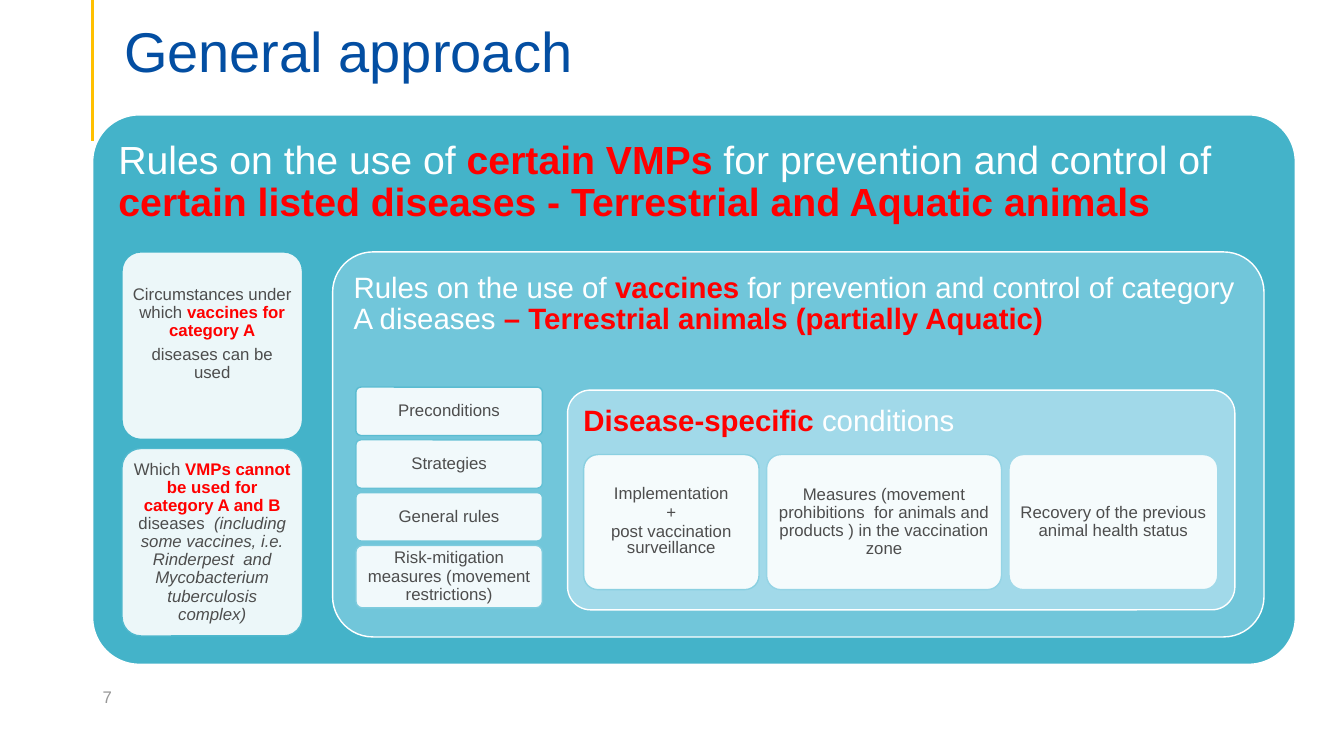
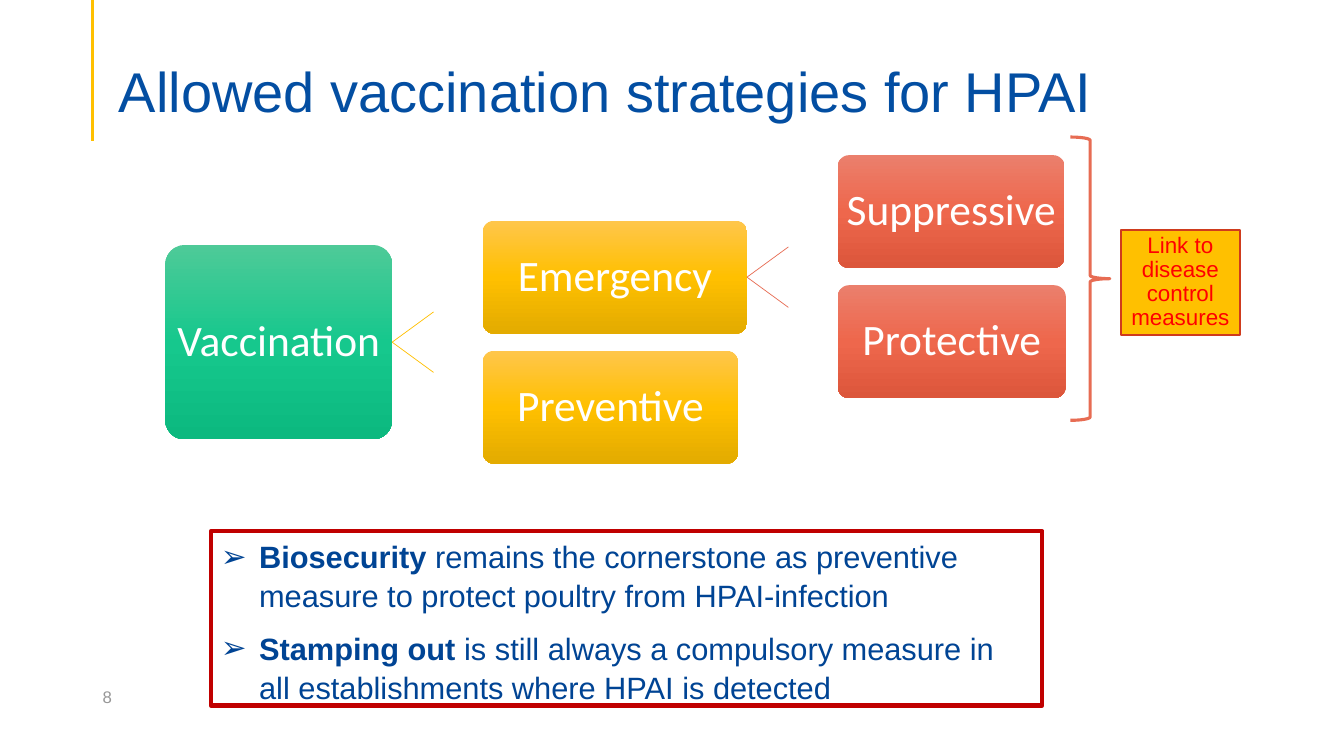
from copy import deepcopy
from itertools import accumulate

from lxml import etree
from pptx import Presentation
from pptx import util as u
from pptx.dml.color import RGBColor
from pptx.enum import shapes, text
from pptx.oxml.ns import qn

# Shared look
WIDTH, HEIGHT = u.Inches(13.33), u.Inches(7.5)
COLORS = {
    "title": "034EA2", "body": "004494", "bar": "FFC000", "number": "979797",
    "white": "FFFFFF", "red": "FF0000", "card_text": "4D4D4D",
    "outer": "44B3C9", "middle": "71C6DA", "inner": "A1D9E9",
    "coral": "E76C53", "note_edge": "CF3B1D", "frame": "C00000",
}
GRADIENTS = {
    "green": ("4ECA98", "16C88D", "0CB97F"),
    "amber": ("FFC64B", "FFC000", "E3AB00"),
    "coral": ("EB7F6C", "EE674C", "DC563B"),
}
RUN_STYLES = {
    "plain": {},
    "key": {"bold": True, "color": "red"},
    "strong": {"bold": True},
    "aside": {"italic": True},
}
LEFT, CENTER = text.PP_ALIGN.LEFT, text.PP_ALIGN.CENTER
TOP, MIDDLE, BOTTOM = (text.MSO_ANCHOR.TOP, text.MSO_ANCHOR.MIDDLE,
                       text.MSO_ANCHOR.BOTTOM)
CARD_COUNT = 9


# Geometry: all places are percentages of the slide's width and height
def place(left, top, width, height):
    return [round(share * side / 100) for share, side in
            zip((left, top, width, height), (WIDTH, HEIGHT) * 2)]


def starts(first, sizes, gap):
    return list(accumulate((size + gap for size in sizes[:-1]), initial=first))


# Colour
def rgb(name):
    return RGBColor.from_string(COLORS.get(name, name))


def blend(start, end, share):
    return "".join(f"{round(a + (b - a) * share):02X}"
                   for a, b in zip(rgb(start), rgb(end)))


def set_fill(shape, color, opacity=None):
    if color is None:
        shape.fill.background()
    elif color in GRADIENTS and opacity == "gradient":
        shape.fill.gradient()
        shape.fill.gradient_angle = 270
        stops = shape._element.spPr.find(".//" + qn("a:gsLst"))
        stops.append(deepcopy(stops[0]))
        for index, stop in enumerate(shape.fill.gradient_stops):
            stop.position = index / 2
            stop.color.rgb = rgb(GRADIENTS[color][index])
    else:
        shape.fill.solid()
        shape.fill.fore_color.rgb = rgb(color)
        if opacity:
            value = shape._element.spPr.find(".//" + qn("a:srgbClr"))
            etree.SubElement(value, qn("a:alpha"), val=str(opacity * 1000))


def set_line(shape, color, points):
    if color is None:
        shape.line.fill.background()
    else:
        shape.line.color.rgb = rgb(color)
        shape.line.width = u.Pt(points)


# Text
def set_all(target, values):
    for name, value in values.items():
        setattr(target, name, value)


def set_bullet(para, mark, indent):
    props = para._p.get_or_add_pPr()
    props.set("marL", str(indent))
    props.set("indent", str(-indent))
    etree.SubElement(props, qn("a:buFont"), typeface="Arial")
    etree.SubElement(props, qn("a:buChar"), char=mark)


def write(shape, paragraphs, size, color, font="Arial", anchor=MIDDLE,
          align=CENTER, spacing=0.9, gap=0, insets=(0.05,) * 4, bullet=None):
    frame = shape.text_frame
    sides = ("margin_left", "margin_top", "margin_right", "margin_bottom")
    set_all(frame, {"word_wrap": True, "auto_size": text.MSO_AUTO_SIZE.NONE,
                    "vertical_anchor": anchor,
                    **dict(zip(sides, map(u.Inches, insets)))})
    for index, spans in enumerate(paragraphs):
        para = frame.add_paragraph() if index else frame.paragraphs[0]
        if bullet:
            set_bullet(para, bullet, u.Inches(0.38))
        set_all(para, {"alignment": align, "line_spacing": spacing,
                       "space_before": u.Pt(gap if index else 0),
                       "space_after": u.Pt(0)})
        for style, words in spans:
            span = para.add_run()
            span.text = words
            values = {"name": font, "size": u.Pt(size), "bold": False,
                      **RUN_STYLES[style]}
            span.font.color.rgb = rgb(values.pop("color", color))
            set_all(span.font, values)


def plain(*lines):
    return [[("plain", line)] for line in lines]


# Elements
def add_box(page, area, fill, line=None, points=1, radius=0.105, opacity=None):
    kinds = shapes.MSO_SHAPE
    kind = kinds.ROUNDED_RECTANGLE if radius else kinds.RECTANGLE
    box = page.shapes.add_shape(kind, *place(*area))
    box.shadow.inherit = False
    if radius:
        box.adjustments[0] = radius
    set_fill(box, fill, opacity)
    set_line(box, line, points)
    return box


def add_panel(page, area, fill, spans, size, inset, radius=0.105):
    panel = add_box(page, area, fill, "white", radius=radius)
    write(panel, [spans], size, "white", anchor=TOP, align=LEFT,
          insets=(inset,) * 4)


def add_card(page, area, order, paragraphs, **layout):
    edge = blend("outer", "inner", order / (CARD_COUNT - 1))
    card = add_box(page, area, "white", edge, opacity=90)
    write(card, paragraphs, 12, "card_text", **layout)


def add_node(page, area, gradient, label):
    node = add_box(page, area, gradient, radius=0.1, opacity="gradient")
    write(node, plain(label), 31, "white", font="Calibri", insets=(0.02,) * 4)


def add_line(page, start, end, color, points):
    ends = place(*start, *end)
    line = page.shapes.add_connector(shapes.MSO_CONNECTOR.STRAIGHT, *ends)
    set_line(line, color, points)
    etree.SubElement(line._element.spPr, qn("a:effectLst"))


def add_fork(page, area, color):
    left, top, width, height = area
    x, y = left + width, top + height / 2
    for rise in (-4, 4):
        add_line(page, (x, y), (x + 3.08, y + rise), color, 0.5)


def add_page(deck, layout, title, title_area, number):
    page = deck.slides.add_slide(deck.slide_layouts[layout])
    add_line(page, (6.9, 0), (6.9, 18.67), "bar", 2.25)
    heading = page.shapes.title
    heading.left, heading.top, heading.width, heading.height = place(*title_area)
    write(heading, plain(title), 40, "title", anchor=BOTTOM, align=LEFT,
          insets=(0.1, 0.05, 0.1, 0))
    box = page.shapes.add_textbox(*place(6.9, 89.47, 22.5, 5.33))
    write(box, plain(str(number)), 12, "number", align=LEFT, spacing=1,
          insets=(0.1, 0.05, 0.1, 0.05))
    return page


# Slides
def build_approach(deck):
    page = add_page(deck, 5, "General approach", (8.48, 2.13, 86.25, 9.07), 7)

    # Nested panels
    add_panel(page, (6.9, 15.2, 89.48, 72.67), "outer", [
        ("plain", "Rules on the use of "),
        ("key", "certain VMPs"),
        ("plain", " for prevention and control of "),
        ("key", "certain listed diseases - Terrestrial and Aquatic animals"),
    ], 28, 0.12, radius=0.085)
    add_panel(page, (24.75, 33.33, 69.3, 50.93), "middle", [
        ("plain", "Rules on the use of "),
        ("key", "vaccines"),
        ("plain", " for prevention and control of category A diseases "),
        ("key", "– Terrestrial animals (partially Aquatic)"),
    ], 21, 0.09)
    add_panel(page, (42.23, 51.6, 49.65, 29.07), "inner", [
        ("key", "Disease-specific "), ("plain", "conditions"),
    ], 21, 0.09)

    # Cards beside the middle panel
    uses = [
        ([[("plain", "Circumstances under which "),
           ("key", "vaccines for category A")],
          [("plain", "diseases can be used")]],
         {"gap": 4, "insets": (0.05, 0.05, 0.05, 0.28)}),
        ([[("plain", "Which "),
           ("key", "VMPs cannot be used for category A and B "),
           ("plain", "diseases  "),
           ("aside", "(including some vaccines, i.e. Rinderpest  and "
                     "Mycobacterium tuberculosis complex)")]], {}),
    ]
    tops = starts(33.33, [24.8] * 2, 1.2)
    for order, (top, (paragraphs, layout)) in enumerate(zip(tops, uses)):
        add_card(page, (9.08, top, 13.43, 24.8), order, paragraphs, **layout)

    # Stacked rules
    rules = ["Preconditions", "Strategies", "General rules",
             "Risk-mitigation measures (movement restrictions)"]
    heights = [6.4, 6.4, 6.4, 8.27]
    rows = zip(starts(51.2, heights, 0.58), heights, rules)
    for order, (top, height, rule) in enumerate(rows, 2):
        add_card(page, (26.48, top, 13.88, height), order, plain(rule))

    # Disease-specific conditions
    conditions = [
        (plain("Implementation", "+", "post vaccination surveillance"),
         {"spacing": 0.8, "gap": 2}),
        (plain("Measures (movement prohibitions  for animals and products ) "
               "in the vaccination zone"), {}),
        (plain("Recovery of the previous animal health status"), {}),
    ]
    widths = [13.05, 17.48, 15.53]
    columns = zip(starts(43.43, widths, 0.56), widths, conditions)
    for order, (left, width, (paragraphs, layout)) in enumerate(columns, 6):
        add_card(page, (left, 60.13, width, 17.87), order, paragraphs, **layout)


def build_strategies(deck):
    page = add_page(deck, 1, "Allowed vaccination strategies for HPAI",
                    (8.1, 5.07, 86.25, 11.47), 8)

    # Decision tree
    root = (12.3, 32.4, 16.88, 25.73)
    add_node(page, root, "green", "Vaccination")
    add_fork(page, root, "bar")
    branches = [
        (35.93, 29.2, "amber", [("Emergency", 19.65), ("Preventive", 18.98)]),
        (62.33, 20.53, "coral", [("Suppressive", 16.88), ("Protective", 16.95)]),
    ]
    for left, first, gradient, nodes in branches:
        for top, (label, width) in zip(starts(first, [14.93] * 2, 2.27), nodes):
            add_node(page, (left, top, width, 14.93), gradient, label)
    add_fork(page, (35.93, 29.2, 19.65, 14.93), "coral")

    # Brace and its note
    note = add_box(page, (83.4, 30.4, 8.85, 13.87), "bar", "note_edge", 1.5,
                   radius=None)
    write(note, plain("Link to disease control measures"), 16, "red",
          insets=(0.08,) * 4)
    brace = page.shapes.add_shape(shapes.MSO_SHAPE.RIGHT_BRACE,
                                  *place(79.65, 18.13, 2.93, 37.47))
    brace.shadow.inherit = False
    set_fill(brace, None)
    set_line(brace, "coral", 2.25)

    # Framed list
    body = page.placeholders[1]
    body.left, body.top, body.width, body.height = place(15.68, 70.27, 61.88, 23.07)
    set_line(body, "frame", 3)
    write(body, [
        [("strong", "Biosecurity "),
         ("plain", "remains the cornerstone as preventive measure to protect "
                   "poultry from HPAI-infection")],
        [("strong", "Stamping out "),
         ("plain", "is still always a compulsory measure in all "
                   "establishments where HPAI is detected")],
    ], 22, "body", anchor=TOP, align=LEFT, spacing=1.05, gap=10,
        insets=(0.1, 0.05, 0.1, 0.05), bullet="➢")


def main():
    deck = Presentation()
    deck.slide_width, deck.slide_height = WIDTH, HEIGHT
    build_approach(deck)
    build_strategies(deck)
    deck.save("out.pptx")


if __name__ == "__main__":
    main()
